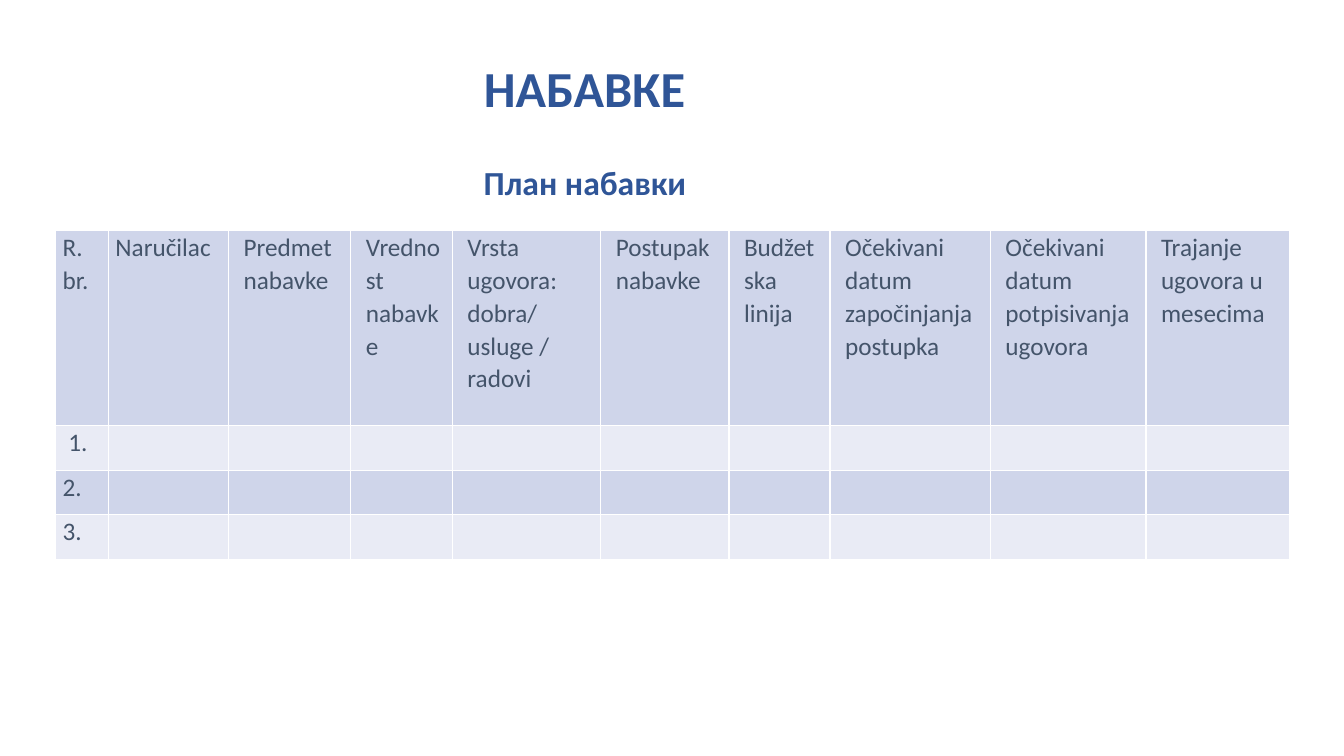
import dataclasses

import pptx
import pptx.dml.color
import pptx.enum.text
import pptx.oxml
import pptx.oxml.ns
import pptx.util

Cm = pptx.util.Cm
Pt = pptx.util.Pt


@dataclasses.dataclass(frozen=True)
class Theme:
    """Colours, font and type sizes of the slide."""
    font: str = "Calibri"
    heading: str = "2F5597"
    body: str = "44546A"
    bands: tuple = ("CFD5EA", "E9EBF5")
    border: str = "FFFFFF"
    title_size: int = 36
    subtitle_size: int = 24
    table_size: int = 18


class SlideBuilder:
    """Adds styled elements to the current slide."""

    def __init__(self, prs, theme):
        """Open a title-only slide."""
        self.theme = theme
        self.slide = prs.slides.add_slide(prs.slide_layouts[5])

    def run(self, p, text, size, color, bold=False):
        """Add one formatted run."""
        r = p.add_run()
        r.text = text
        r.font.name = self.theme.font
        r.font.size = Pt(size)
        r.font.bold = bold
        r.font.color.rgb = pptx.dml.color.RGBColor.from_string(color)

    def heading(self, sp, box, text, size):
        """Place a shape and write a heading in it."""
        sp.left, sp.top, sp.width, sp.height = map(Cm, box)
        tf = sp.text_frame
        tf.word_wrap = True
        tf.auto_size = pptx.enum.text.MSO_AUTO_SIZE.SHAPE_TO_FIT_TEXT
        tf.vertical_anchor = pptx.enum.text.MSO_ANCHOR.TOP
        p = tf.paragraphs[0]
        p.alignment = pptx.enum.text.PP_ALIGN.LEFT
        self.run(p, text, size, self.theme.heading, bold=True)

    def title(self, box, text):
        """Fill the title placeholder."""
        self.heading(self.slide.shapes.title, box, text, self.theme.title_size)

    def subtitle(self, box, text):
        """Add a text box with the subtitle."""
        sp = self.slide.shapes.add_textbox(*map(Cm, box))
        self.heading(sp, box, text, self.theme.subtitle_size)

    def cell(self, cell, paragraphs, indent, fill):
        """Style a table cell and write its paragraphs."""
        cell.margin_left = cell.margin_right = Cm(0.18)
        cell.margin_top = cell.margin_bottom = 0
        tc_pr = cell._tc.get_or_add_tcPr()
        for side in ("lnL", "lnR", "lnT", "lnB"):
            tc_pr.append(pptx.oxml.parse_xml(
                f'<a:{side} {pptx.oxml.ns.nsdecls("a")} w="{Pt(1)}"><a:solidFill>'
                f'<a:srgbClr val="{self.theme.border}"/></a:solidFill></a:{side}>'))
        cell.fill.solid()
        cell.fill.fore_color.rgb = pptx.dml.color.RGBColor.from_string(fill)
        tf = cell.text_frame
        for i, text in enumerate(paragraphs):
            p = tf.add_paragraph() if i else tf.paragraphs[0]
            p.line_spacing = 1.07
            p._p.get_or_add_pPr().set("marL", str(Cm(indent)))
            self.run(p, text, self.theme.table_size, self.theme.body)

    def table(self, left, top, widths, heights, rows):
        """Add a banded table; each cell is a pair of paragraphs and indent."""
        frame = self.slide.shapes.add_table(
            len(heights), len(widths), Cm(left), Cm(top), Cm(sum(widths)), Cm(sum(heights)))
        table = frame.table
        table.first_row = table.horz_banding = False
        for column, width in zip(table.columns, widths):
            column.width = Cm(width)
        for i, (row, height) in enumerate(zip(table.rows, heights)):
            row.height = Cm(height)
            for cell, (paragraphs, indent) in zip(row.cells, rows[i]):
                self.cell(cell, paragraphs, indent, self.theme.bands[i % 2])


def main():
    """Build the procurement plan slide."""
    prs = pptx.Presentation()
    prs.slide_width, prs.slide_height = Cm(33.87), Cm(19.05)
    slide = SlideBuilder(prs, Theme())
    slide.title((11.94, 1.3, 7.75, 1.8), "НАБАВКЕ")

    widths = [1.33, 3.03, 3.08, 2.56, 3.74, 3.23, 2.55, 4.04, 3.92, 3.63]
    header = [
        (["R. br."], 0),
        (["Naručilac"], 0),
        (["Predmet nabavke"], 0.2),
        (["Vrednost nabavke"], 0.2),
        (["Vrsta ugovora: dobra/", "usluge / radovi"], 0.2),
        (["Postupak nabavke"], 0.2),
        (["Budžetska linija"], 0.2),
        (["Očekivani datum započinjanja postupka"], 0.2),
        (["Očekivani datum potpisivanja ugovora"], 0.2),
        (["Trajanje ugovora u mesecima"], 0.2),
    ]
    empty = [([], 0)] * (len(widths) - 1)
    numbers = [(["1."], 0.14), (["2."], 0), (["3."], 0)]
    rows = [header] + [[number] + empty for number in numbers]
    slide.table(1.4, 5.8, widths, [4.93] + [1.12] * len(numbers), rows)

    slide.subtitle((11.94, 3.96, 5.92, 1.27), "План набавки")
    prs.save("out.pptx")


if __name__ == "__main__":
    main()
